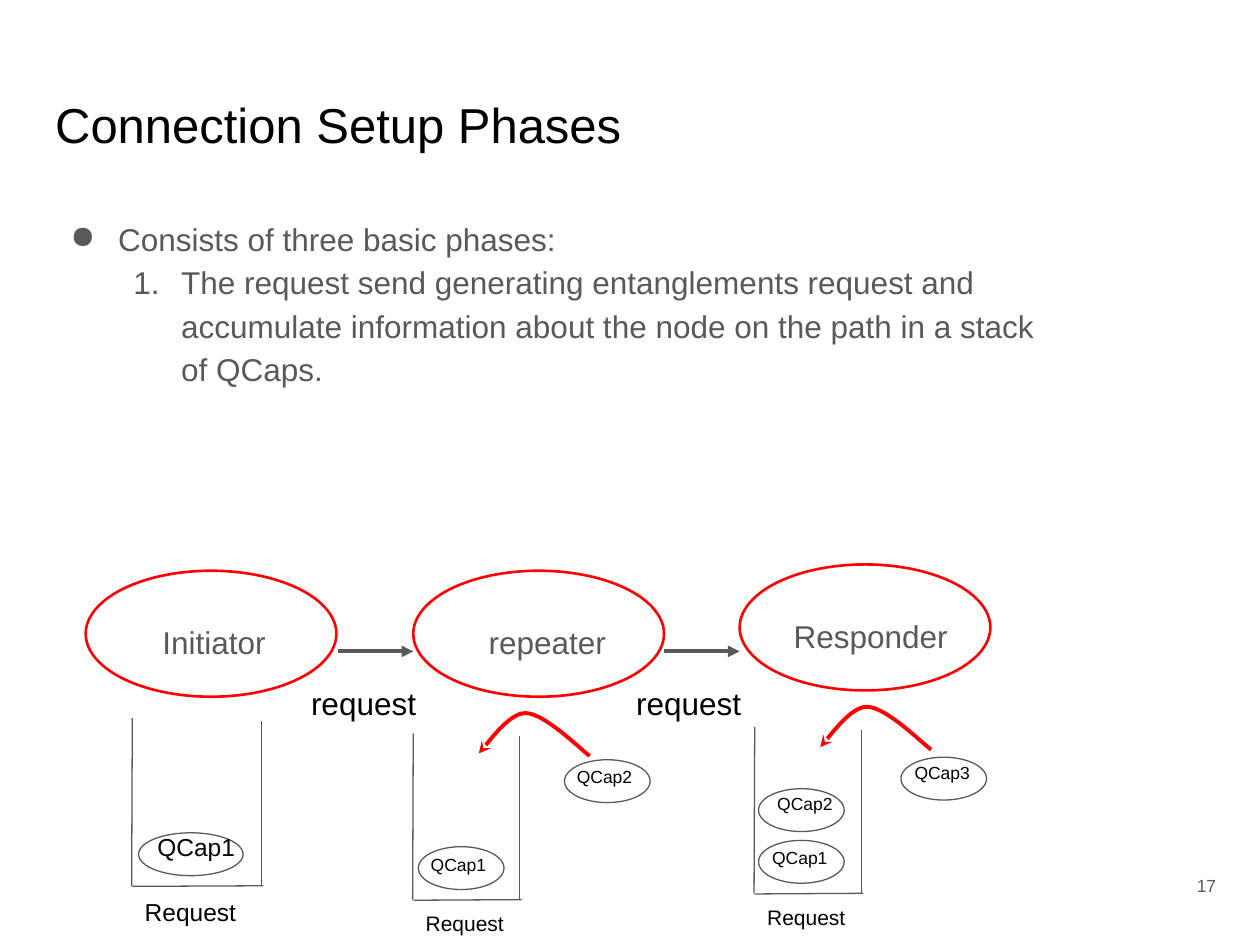
"""Slide on the phases of connection setup, laid out on a grid of 100 columns by 75 rows."""
from lxml.etree import SubElement
from pptx import Presentation
from pptx.dml.color import RGBColor
from pptx.enum.shapes import MSO_CONNECTOR as Link, MSO_SHAPE as Form
from pptx.enum.text import MSO_ANCHOR as Anchor, PP_ALIGN as Align
from pptx.oxml.ns import qn
from pptx.util import Inches, Pt

BLACK = RGBColor(0, 0, 0)
GRAY = RGBColor(0x59, 0x59, 0x59)
RED = RGBColor(0xFF, 0, 0)

deck = Presentation()
deck.slide_width, deck.slide_height = Inches(10), Inches(7.5)
slide = deck.slides.add_slide(deck.slide_layouts[6])
shapes = slide.shapes
col, row = deck.slide_width / 100, deck.slide_height / 75


def grid(*spots):
    return [round(n * (row if i % 2 else col)) for i, n in enumerate(spots)]


def text(words, spot, size, color=BLACK, space=1.0):
    box = shapes.add_textbox(*grid(*spot))
    frame = box.text_frame
    frame.word_wrap = True
    frame.margin_left = frame.margin_right = Inches(0.1)
    frame.margin_top = frame.margin_bottom = Inches(0.1)
    frame.text = words
    for para in frame.paragraphs:
        para.line_spacing = space
        para.font.name, para.font.size = "Arial", Pt(size)
        para.font.color.rgb = color
    return frame


text("Connection Setup Phases", (3.4, 6.5, 55.6, 8.3), 28)

body = text(
    "Consists of three basic phases:\n"
    "The request send generating entanglements request and accumulate "
    "information about the node on the path in a stack of QCaps.",
    (3.4, 16, 79.7, 25.2), 18, GRAY, 1.15)
marks = [("a:buChar", {"char": "●"}), ("a:buAutoNum", {"type": "arabicPeriod"})]
for level, (para, (tag, mark)) in enumerate(zip(body.paragraphs, marks), 1):
    props = para._p.get_or_add_pPr()
    props.set("marL", str(Inches(0.5 * level)))
    props.set("indent", str(-Inches(0.38)))
    tint = SubElement(props, qn("a:buClr"))
    SubElement(tint, qn("a:srgbClr"), val=str(GRAY))
    SubElement(props, qn(tag), **mark)

page = text("17", (92.4, 67.9, 5.1, 4.8), 10, GRAY)
page.vertical_anchor = Anchor.MIDDLE
page.paragraphs[0].alignment = Align.RIGHT

nodes = [
    ("Initiator", 6.8, 45.3, 5.1, 10.2),
    ("repeater", 32.8, 45.3, 5, 11.7),
    ("Responder", 58.7, 44.8, 3.3, 14.2),
]
caps = [
    ("QCap1", 11, 66.1, 8.3, 0.5, -0.5, 14),
    ("QCap2", 44.8, 60.3, 6.8, 0, -0.1, 10),
    ("QCap1", 33.2, 67.2, 6.8, 0, 0, 10),
    ("QCap2", 60.2, 62.6, 6.8, 0.5, -0.2, 10),
    ("QCap1", 60.2, 66.7, 6.8, 0.1, 0, 10),
    ("QCap3", 71.5, 60.1, 6.8, 0.1, -0.2, 10),
]
ovals = [((x, y, 19.9, 10), RED, 1.5) for _, x, y, _, _ in nodes]
ovals += [((x, y, w, 3.4), GRAY, 0.75) for _, x, y, w, *_ in caps]
for spot, color, width in ovals:
    oval = shapes.add_shape(Form.OVAL, *grid(*spot))
    oval.shadow.inherit = False
    oval.fill.background()
    oval.line.color.rgb, oval.line.width = color, Pt(width)

for name, x, y, dx, w in nodes:
    label = text(name, (x + dx, y + 2.7, w, 3.5), 18, GRAY, 1.15)
    label.paragraphs[0].space_after = Pt(16)
for name, x, y, w, dx, dy, size in caps:
    text(name, (x + dx, y + dy, w, 1.4), size)
for x in (23.7, 49.5):
    text("request", (x, 53.3, 10.8, 2.8), 18)

stacks = [
    (10.5, 57, 10.4, 13.3, 10.7, 14),
    (32.8, 58.2, 8.6, 13.2, 8.8, 12),
    (59.9, 57.7, 8.6, 13.2, 8.8, 12),
]
lines = [((x, 51.7, x + 6, 51.7), 2.25, "triangle") for x in (26.8, 52.7)]
for x, y, w, h, wide, size in stacks:
    base, side = y + h, x + w - 0.15
    lines += [
        ((x, y, x - 0.05, base), 0.75, None),
        ((x, base + 0.05, x + w, base), 0.75, None),
        ((side, base, side, y + 0.25), 0.75, None),
    ]
    text("Request", (x, base + 0.2, wide, 1.7), size)

strokes = []
for ends, width, head in lines:
    line = shapes.add_connector(Link.STRAIGHT, *grid(*ends))
    strokes.append((line, GRAY, width, head))

bends = [
    [(14, 1.8), (13.2, 1.2), (10.4, -1.6), (8.9, -1.6)],
    [(8.9, -1.6), (7.5, -1.6), (5.8, 1), (5.2, 1.6)],
]
steps = 16
for x, y, *_ in stacks[1:]:
    dots = []
    for bend in bends:
        for i in range(steps + 1):
            t = i / steps
            parts = ((1 - t) ** 3, 3 * t * (1 - t) ** 2, 3 * t * t * (1 - t), t ** 3)
            dx, dy = (sum(k * n for k, n in zip(parts, axis)) for axis in zip(*bend))
            dots.append(tuple(grid(x + dx, y + dy)))
    path = shapes.build_freeform(*dots[0])
    path.add_line_segments(dots[1:], close=False)
    curve = path.convert_to_shape()
    curve.fill.background()
    strokes.append((curve, RED, 2.25, "stealth"))

for stroke, color, width, head in strokes:
    stroke.line.color.rgb, stroke.line.width = color, Pt(width)
    props = stroke._element.spPr
    if head:
        SubElement(props.find(qn("a:ln")), qn("a:tailEnd"), type=head)
    SubElement(props, qn("a:effectLst"))

deck.save("out.pptx")
